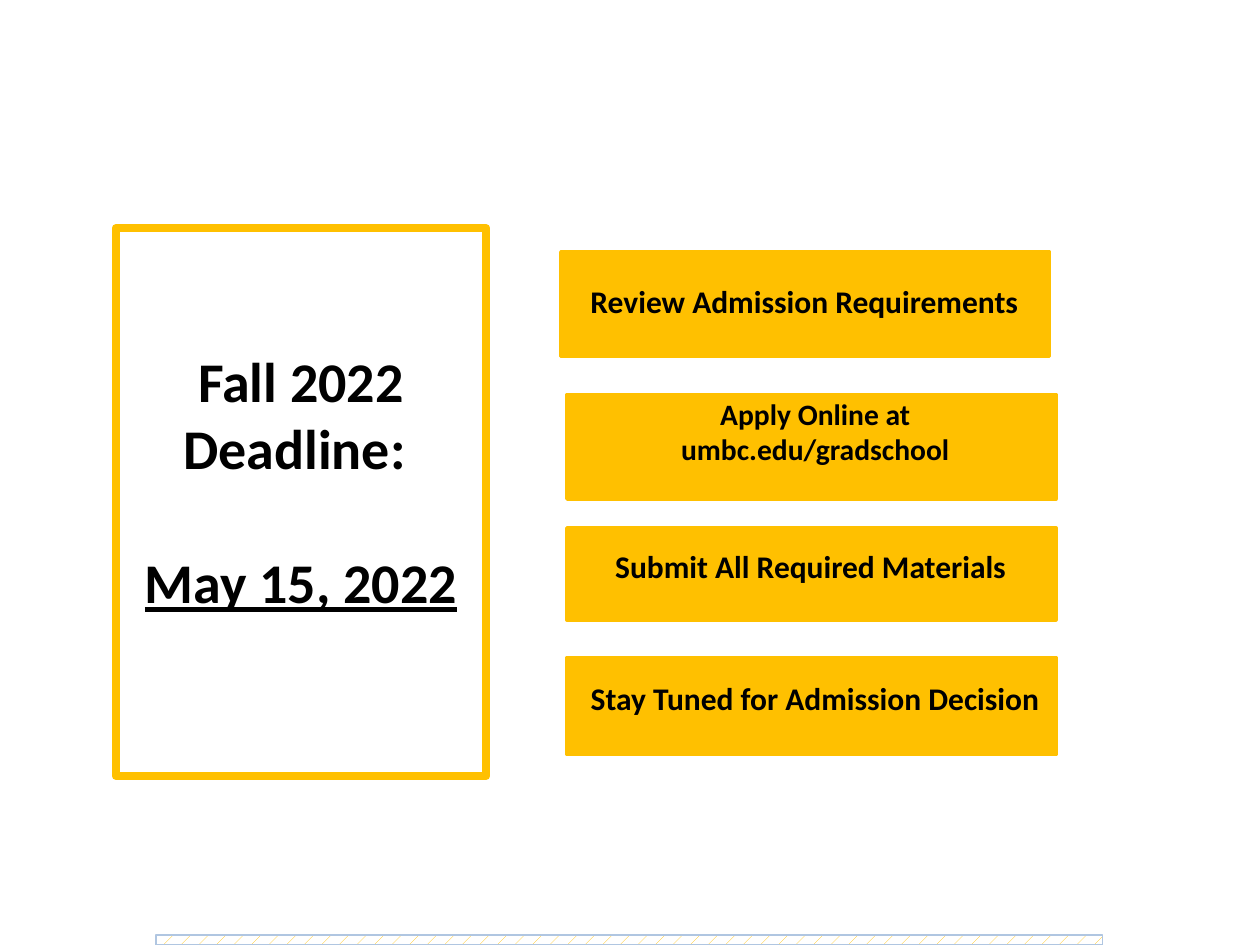
from dataclasses import dataclass

from pptx import Presentation
from pptx.dml.color import RGBColor
from pptx.enum.dml import MSO_PATTERN
from pptx.enum.shapes import MSO_SHAPE
from pptx.enum.text import MSO_ANCHOR, MSO_AUTO_SIZE, PP_ALIGN
from pptx.shapes.autoshape import Shape
from pptx.slide import Slide
from pptx.util import Pt

RECT = MSO_SHAPE.RECTANGLE
DOTS = MSO_PATTERN.PERCENT_5
MIDDLE, TOP = MSO_ANCHOR.MIDDLE, MSO_ANCHOR.TOP
FIXED = MSO_AUTO_SIZE.NONE
CENTER = PP_ALIGN.CENTER

GOLD = RGBColor(0xFF, 0xC0, 0x00)
PALE = RGBColor(0xB0, 0xC6, 0xE1)
WHITE = RGBColor(0xFF, 0xFF, 0xFF)
BLACK = RGBColor(0x00, 0x00, 0x00)


@dataclass(frozen=True)
class Box:
    left: float
    top: float
    width: float
    height: float

    def points(self) -> tuple[Pt, Pt, Pt, Pt]:
        return Pt(self.left), Pt(self.top), Pt(self.width), Pt(self.height)


@dataclass(frozen=True)
class Step:
    bar: Box
    label: Box
    lines: tuple[str, ...]
    size: float = 18


BAR = 279.4
STEPS = (
    Step(Box(320.4, 144, BAR, 59.8), Box(324.7, 157.7, 270, 29),
         ("Review Admission Requirements",)),
    Step(Box(324, 225.4, BAR, 59.8), Box(326.2, 222.5, BAR, 48),
         ("Apply Online at", "umbc.edu/gradschool"), 16.9),
    Step(Box(324, 301.7, BAR, 52.6), Box(328.3, 308.9, 270, 29),
         ("Submit All Required Materials",)),
    Step(Box(324, 375.8, BAR, 55.4), Box(329, 384.5, 273.6, 29),
         ("Stay Tuned for Admission Decision",)),
)


def write(shape: Shape, lines: tuple[str, ...], size: float, anchor: MSO_ANCHOR) -> None:
    frame = shape.text_frame
    frame.text = "\n".join(lines)
    for key, value in {"word_wrap": True, "auto_size": FIXED,
                       "vertical_anchor": anchor}.items():
        setattr(frame, key, value)
    look = {"name": "Calibri", "size": Pt(size), "bold": True}
    for para in frame.paragraphs:
        para.alignment = CENTER
        for run in para.runs:
            for key, value in look.items():
                setattr(run.font, key, value)
            run.font.color.rgb = BLACK


def add_bar(slide: Slide, box: Box, line: RGBColor, weight: float) -> Shape:
    bar = slide.shapes.add_shape(RECT, *box.points())
    bar.shadow.inherit = False
    bar.fill.solid()
    bar.fill.fore_color.rgb = GOLD
    bar.line.color.rgb = line
    bar.line.width = Pt(weight)
    return bar


def add_title(slide: Slide) -> None:
    title = slide.shapes.title
    title.left, title.top, title.width, title.height = Box(66.2, 130.3, 211.7, 313.2).points()
    title.line.color.rgb = GOLD
    title.line.width = Pt(4.5)
    write(title, ("Fall 2022 Deadline: ", "May 15, 2022"), 32, MIDDLE)
    # The bottom inset lifts the text above the middle of the frame
    title.text_frame.margin_bottom = Pt(28)
    date = title.text_frame.paragraphs[1]
    date.space_before = Pt(38.4)
    date.runs[0].font.underline = True


def main() -> None:
    deck = Presentation()
    deck.slide_width, deck.slide_height = Pt(720), Pt(540)
    slide = deck.slides.add_slide(deck.slide_layouts[5])

    # Deadline panel
    add_title(slide)

    # Patterned strip at the foot
    strip = add_bar(slide, Box(89.3, 534.2, 540.7, 5.8), PALE, 1)
    strip.fill.patterned()
    strip.fill.pattern = DOTS
    strip.fill.fore_color.rgb = GOLD
    strip.fill.back_color.rgb = WHITE

    # Application steps: bars, then their labels
    for step in STEPS:
        add_bar(slide, step.bar, GOLD, 2)
    for step in STEPS:
        label = slide.shapes.add_textbox(*step.label.points())
        write(label, step.lines, step.size, TOP)

    deck.save("out.pptx")


if __name__ == "__main__":
    main()
